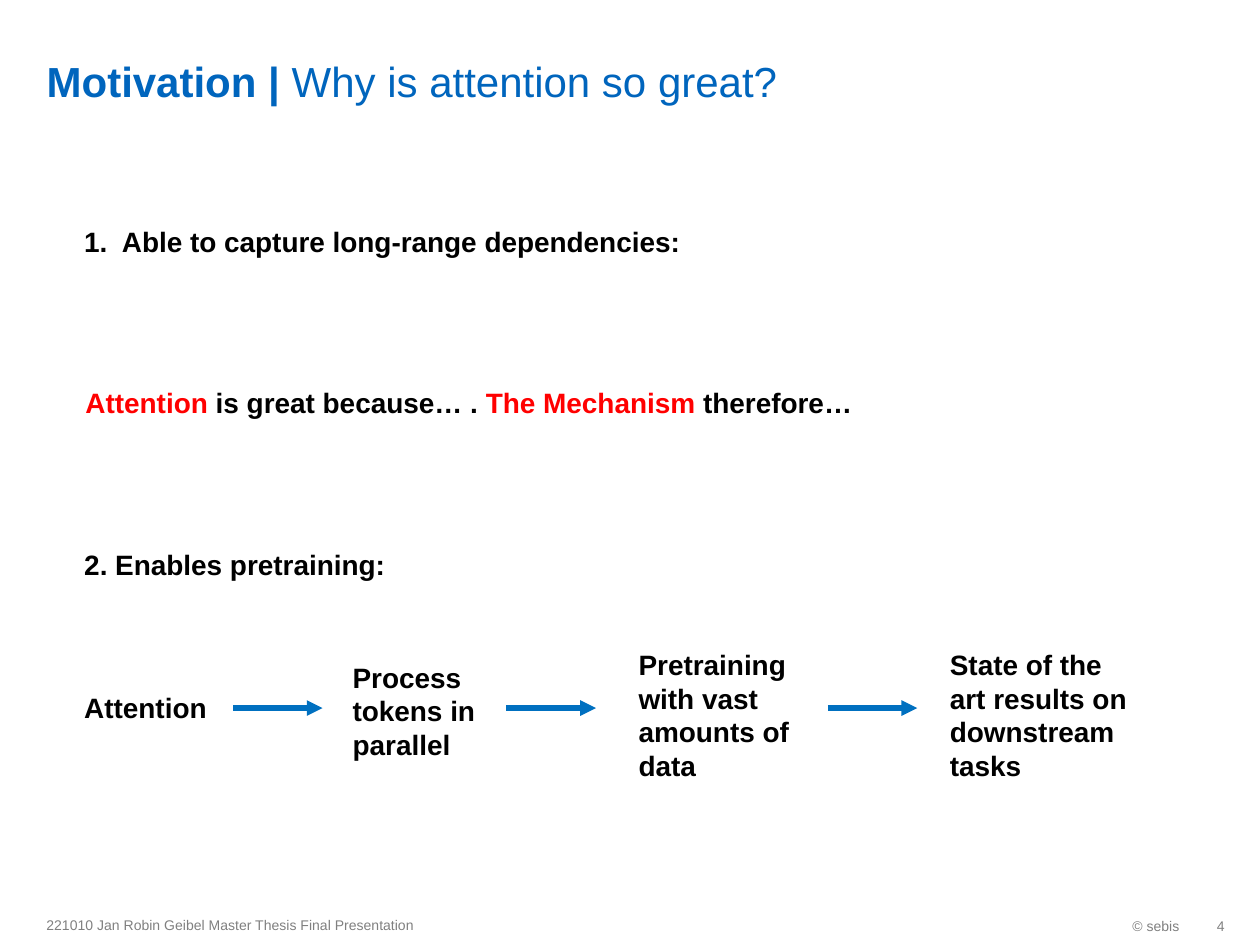
from lxml import etree
from pptx import Presentation
from pptx.dml.color import RGBColor
from pptx.enum.shapes import MSO_CONNECTOR
from pptx.enum.text import MSO_ANCHOR, MSO_AUTO_SIZE, PP_ALIGN
from pptx.oxml.ns import qn
from pptx.util import Inches, Pt

STRAIGHT = MSO_CONNECTOR.STRAIGHT
TOP, MIDDLE, BOTTOM = MSO_ANCHOR.TOP, MSO_ANCHOR.MIDDLE, MSO_ANCHOR.BOTTOM
LEFT, RIGHT = PP_ALIGN.LEFT, PP_ALIGN.RIGHT
NO_AUTOFIT = MSO_AUTO_SIZE.NONE
FIT_SHAPE = MSO_AUTO_SIZE.SHAPE_TO_FIT_TEXT

TITLE_BLUE = RGBColor(0x00, 0x65, 0xBD)
ARROW_BLUE = RGBColor(0x00, 0x70, 0xC0)
BLACK = RGBColor(0x00, 0x00, 0x00)
RED = RGBColor(0xFF, 0x00, 0x00)
GRAY = RGBColor(0x80, 0x80, 0x80)


def write_text(box, spans, size=16, anchor=TOP, align=LEFT, wrap=False, fit=FIT_SHAPE):
    """Fill a box with one paragraph of (text, colour, bold) spans."""
    frame = box.text_frame
    frame.word_wrap = wrap
    frame.auto_size = fit
    frame.vertical_anchor = anchor
    para = frame.paragraphs[0]
    para.alignment = align
    for text, color, bold in spans:
        span = para.add_run()
        span.text = text
        span.font.name = "Arial"
        span.font.size = Pt(size)
        span.font.bold = bold
        span.font.color.rgb = color
    return frame


def add_box(page, left, top, width, height):
    return page.shapes.add_textbox(Inches(left), Inches(top), Inches(width), Inches(height))


deck = Presentation()
deck.slide_width, deck.slide_height = Inches(10), Inches(7.5)
page = deck.slides.add_slide(deck.slide_layouts[5])

# Title
title = page.shapes.title
title.left, title.top = Inches(0.27), Inches(0.05)
title.width, title.height = Inches(8.43), Inches(0.79)
title_spans = [("Motivation | ", TITLE_BLUE, True),
               ("Why is attention so great?", TITLE_BLUE, False)]
frame = write_text(title, title_spans, size=24, anchor=BOTTOM, wrap=True, fit=NO_AUTOFIT)
frame.margin_top = frame.margin_bottom = 0

# Headings of the two reasons
for text, top, width in [("1.  Able to capture long-range dependencies:", 1.73, 5),
                         ("2. Enables pretraining:", 4.3, 2.75)]:
    write_text(add_box(page, 0.57, top, width, 0.37), [(text, BLACK, True)])

# Example sentence with highlighted references
write_text(add_box(page, 0.58, 3.01, 6.49, 0.37), [
    ("Attention", RED, True),
    (" is great because… . ", BLACK, True),
    ("The Mechanism", RED, True),
    (" therefore…", BLACK, True),
])

# Steps of the pretraining chain
steps = [
    ("Attention", 0.57, 5.43, 1.19, 0.37, False),
    ("Process tokens in parallel", 2.7, 5.19, 1.32, 0.91, True),
    ("Pretraining with vast amounts of data", 4.97, 5.09, 1.53, 1.18, True),
    ("State of the art results on downstream tasks", 7.44, 5.09, 1.71, 1.18, True),
]
for text, left, top, width, height, wrap in steps:
    write_text(add_box(page, left, top, width, height), [(text, BLACK, True)], wrap=wrap)

# Arrows between the steps
arrow_y, arrow_length = 5.62, 0.71
for left in (1.85, 4.02, 6.57):
    arrow = page.shapes.add_connector(STRAIGHT, Inches(left), Inches(arrow_y),
                                      Inches(left + arrow_length), Inches(arrow_y))
    arrow.line.color.rgb = ARROW_BLUE
    arrow.line.width = Pt(3)
    etree.SubElement(arrow.line._get_or_add_ln(), qn("a:tailEnd"), type="triangle")
    etree.SubElement(arrow._element.spPr, qn("a:effectLst"))

# Footer
footers = [
    ("221010 Jan Robin Geibel Master Thesis Final Presentation", 0.27, 7.18, 4.73, LEFT, True, 0.1),
    ("© sebis", 7.7, 7.19, 1.76, RIGHT, False, 0.1),
    ("4", 9.45, 7.19, 0.27, RIGHT, False, 0),
]
for text, left, top, width, align, wrap, margin_right in footers:
    frame = write_text(add_box(page, left, top, width, 0.32), [(text, GRAY, False)], size=8,
                       anchor=MIDDLE, align=align, wrap=wrap, fit=NO_AUTOFIT)
    frame.margin_right = Inches(margin_right)

deck.save("out.pptx")
